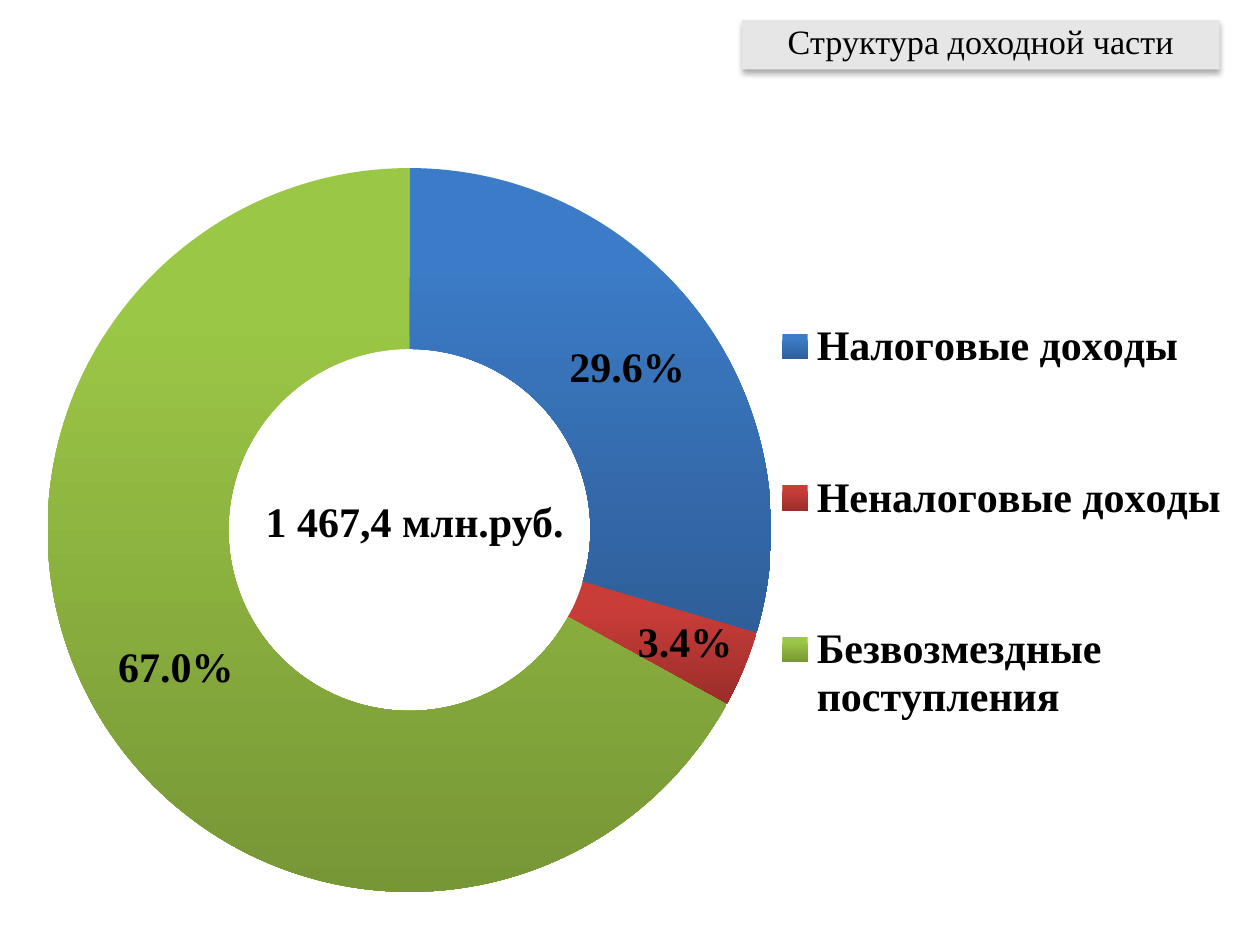
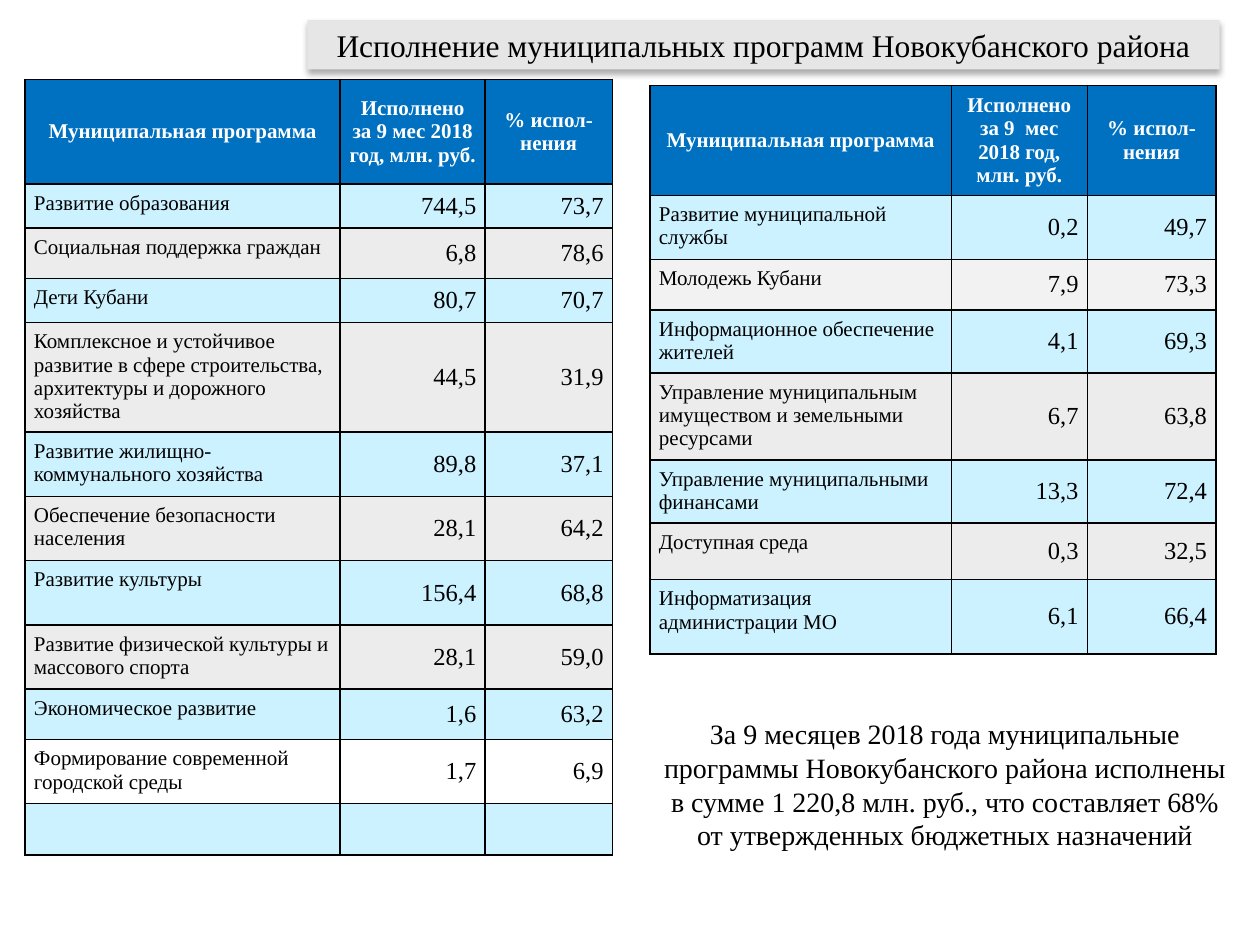
"""Build two slides on budget income and municipal programmes."""
from lxml import etree
from pptx import Presentation
from pptx.chart.data import CategoryChartData
from pptx.dml.color import RGBColor
from pptx.enum.chart import XL_CHART_TYPE, XL_LEGEND_POSITION
from pptx.enum.text import MSO_ANCHOR, MSO_AUTO_SIZE, PP_ALIGN
from pptx.oxml import parse_xml
from pptx.oxml.ns import nsdecls
from pptx.util import Inches, Pt

RING = XL_CHART_TYPE.DOUGHNUT
SIDE = XL_LEGEND_POSITION.RIGHT
MID, TOP = MSO_ANCHOR.MIDDLE, MSO_ANCHOR.TOP
LEFT, MIDDLE, RIGHT = PP_ALIGN.LEFT, PP_ALIGN.CENTER, PP_ALIGN.RIGHT
FIXED = MSO_AUTO_SIZE.NONE

FONT = "Times New Roman"
BLACK = RGBColor(0, 0, 0)
WHITE = RGBColor(255, 255, 255)
BAND = RGBColor(0xE6, 0xE6, 0xE6)
HEAD = RGBColor(0x00, 0x70, 0xC0)
SKY = RGBColor(0xCD, 0xF2, 0xFF)
GREY = RGBColor(0xEC, 0xEC, 0xEC)
PALE = RGBColor(0xF2, 0xF2, 0xF2)
SHADES = [
    (RGBColor(0x3C, 0x7B, 0xC7), RGBColor(0x2E, 0x5F, 0x99)),
    (RGBColor(0xC9, 0x3D, 0x39), RGBColor(0x9B, 0x2D, 0x2A)),
    (RGBColor(0x9B, 0xC7, 0x46), RGBColor(0x77, 0x96, 0x36)),
]


def write(frame, text, size, color=BLACK, bold=False, align=LEFT):
    """Put one styled paragraph in a text frame."""
    frame.text = text
    para = frame.paragraphs[0]
    para.alignment = align
    for run in para.runs:
        font = run.font
        font.name, font.size, font.bold = FONT, Pt(size), bold
        font.color.rgb = color
    return para


def place(node, x, y, w, h, inner=False):
    """Give a chart part a fixed layout in shares of the chart."""
    goal = '<c:layoutTarget val="inner"/>' if inner else ""
    old = node.find("{*}layout")
    new = parse_xml(
        f'<c:layout {nsdecls("c")}><c:manualLayout>{goal}'
        '<c:xMode val="edge"/><c:yMode val="edge"/>'
        f'<c:x val="{x}"/><c:y val="{y}"/><c:w val="{w}"/><c:h val="{h}"/>'
        '</c:manualLayout></c:layout>')
    if old is not None:
        node.replace(old, new)
    elif inner:
        node.insert(0, new)
    else:
        node.find("{*}legendPos").addnext(new)


deck = Presentation()
deck.slide_width, deck.slide_height = Inches(10), Inches(7.5)

slides = []
for text, left, size, gap in [
    ("Структура доходной части", 5.89, 19.5, 0.8),
    ("Исполнение муниципальных программ Новокубанского района", 2.44, 18, 1),
]:
    slide = deck.slides.add_slide(deck.slide_layouts[5])
    title = slide.shapes.title
    title.left, title.top = Inches(left), Inches(0.16)
    title.width, title.height = Inches(9.68 - left), Inches(0.39)
    title.fill.solid()
    title.fill.fore_color.rgb = BAND
    title._element.spPr.append(parse_xml(
        f'<a:effectLst {nsdecls("a")}><a:outerShdw blurRad="44450" '
        'dist="27940" dir="5400000"><a:srgbClr val="000000">'
        '<a:alpha val="32000"/></a:srgbClr></a:outerShdw></a:effectLst>'))
    frame = title.text_frame
    frame.word_wrap, frame.auto_size = True, FIXED
    frame.vertical_anchor = MID
    write(frame, text, size, align=MIDDLE).line_spacing = gap
    slides.append(slide)
income, plans = slides

data = CategoryChartData()
data.categories = ["Налоговые доходы", "Неналоговые доходы",
                   "Безвозмездные поступления"]
data.add_series("Series 1", [29.6, 3.4, 67])
chart = income.shapes.add_chart(
    RING, 0, Inches(0.8), Inches(10), Inches(6.68), data).chart
chart.has_title = False
chart.font.name, chart.font.size, chart.font.bold = FONT, Pt(24), True
chart.font.color.rgb = BLACK
chart.has_legend = True
chart.legend.position = SIDE
chart.legend.include_in_layout = False
place(chart.legend._element, 0.61, 0.14, 0.37, 0.72)
plot = chart.plots[0]
plot.vary_by_categories = True
place(chart._chartSpace.chart.plotArea, 0.03, 0.08, 0.59, 0.86, True)
ring = plot.series[0]
marks = ring.data_labels
marks.show_percentage, marks.show_value = True, False
marks.number_format, marks.number_format_is_linked = "0.0%", False
marks._element.insert(0, parse_xml(
    f'<c:dLbl {nsdecls("c")}><c:idx val="1"/><c:layout><c:manualLayout>'
    '<c:x val="0.02"/><c:y val="0.01"/></c:manualLayout></c:layout>'
    '<c:numFmt formatCode="0.0%" sourceLinked="0"/>'
    '<c:showLegendKey val="0"/><c:showVal val="0"/><c:showCatName val="0"/>'
    '<c:showSerName val="0"/><c:showPercent val="1"/>'
    '<c:showBubbleSize val="0"/></c:dLbl>'))
for i, pair in enumerate(SHADES):
    fill = ring.points[i].format.fill
    fill.gradient()
    fill.gradient_angle = 270
    for stop, color, spot in zip(fill.gradient_stops, pair, (0.2, 1)):
        stop.color.rgb, stop.position = color, spot

total = income.shapes.add_textbox(
    Inches(2.01), Inches(3.88), Inches(2.99), Inches(0.5))
total.text_frame.word_wrap = True
write(total.text_frame, "1 467,4 млн.руб.", 24, bold=True)

TABLES = [
    (5.16, 0.68, [2.39, 1.08, 1.02], {2: PALE}, [
        (0.87, "Муниципальная программа",
         "Исполнено за 9  мес 2018 год, млн. руб.", "% испол-нения"),
        (0.51, "Развитие муниципальной службы", "0,2", "49,7"),
        (0.4, "Молодежь Кубани", "7,9", "73,3"),
        (0.5, "Информационное обеспечение жителей", "4,1", "69,3"),
        (0.69, "Управление муниципальным имуществом и земельными ресурсами",
         "6,7", "63,8"),
        (0.5, "Управление муниципальными финансами", "13,3", "72,4"),
        (0.45, "Доступная среда", "0,3", "32,5"),
        (0.59, "Информатизация администрации МО", "6,1", "66,4"),
    ]),
    (0.2, 0.63, [2.5, 1.15, 1.01], {10: WHITE}, [
        (0.83, "Муниципальная программа",
         "Исполнено за 9 мес 2018 год, млн. руб.", "% испол-нения"),
        (0.35, "Развитие образования", "744,5", "73,7"),
        (0.4, "Социальная поддержка граждан", "6,8", "78,6"),
        (0.35, "Дети Кубани", "80,7", "70,7"),
        (0.87, "Комплексное и устойчивое развитие в сфере строительства, "
         "архитектуры и дорожного хозяйства", "44,5", "31,9"),
        (0.51, "Развитие жилищно-коммунального хозяйства", "89,8", "37,1"),
        (0.51, "Обеспечение безопасности населения", "28,1", "64,2"),
        (0.51, "Развитие культуры", "156,4", "68,8"),
        (0.51, "Развитие физической культуры и массового спорта",
         "28,1", "59,0"),
        (0.4, "Экономическое развитие", "1,6", "63,2"),
        (0.51, "Формирование современной городской среды", "1,7", "6,9"),
        (0.4, "", "", ""),
    ]),
]
for left, top, widths, odd, rows in TABLES:
    high = sum(row[0] for row in rows)
    grid = plans.shapes.add_table(
        len(rows), 3, Inches(left), Inches(top),
        Inches(sum(widths)), Inches(high)).table
    for col, width in zip(grid.columns, widths):
        col.width = Inches(width)
    for r, (tall, *texts) in enumerate(rows):
        grid.rows[r].height = Inches(tall)
        tint = HEAD if r == 0 else odd.get(r, SKY if r % 2 else GREY)
        for c, text in enumerate(texts):
            cell = grid.cell(r, c)
            if text:
                cell.margin_left = cell.margin_right = Inches(0.07)
                cell.margin_top = cell.margin_bottom = Inches(0.06)
            cell.vertical_anchor = MID if r == 0 or c else TOP
            if r == 0:
                write(cell.text_frame, text, 12, WHITE, True, MIDDLE)
            elif c:
                write(cell.text_frame, text, 14, align=RIGHT)
            else:
                write(cell.text_frame, text, 12)
            props = cell._tc.get_or_add_tcPr()
            for side in "LRTB":
                line = parse_xml(
                    f'<a:ln{side} {nsdecls("a")} w="12700"><a:solidFill>'
                    f'<a:srgbClr val="{BLACK}"/></a:solidFill></a:ln{side}>')
                props.append(line)
            etree.cleanup_namespaces(props)
            cell.fill.solid()
            cell.fill.fore_color.rgb = tint

note = plans.shapes.add_textbox(
    Inches(5.13), Inches(5.64), Inches(4.74), Inches(1.18))
note.text_frame.word_wrap = True
write(note.text_frame,
      "За 9 месяцев 2018 года муниципальные программы Новокубанского района "
      "исполнены в сумме 1 220,8 млн. руб., что составляет 68% от "
      "утвержденных бюджетных назначений", 16, align=MIDDLE)

deck.save("out.pptx")
